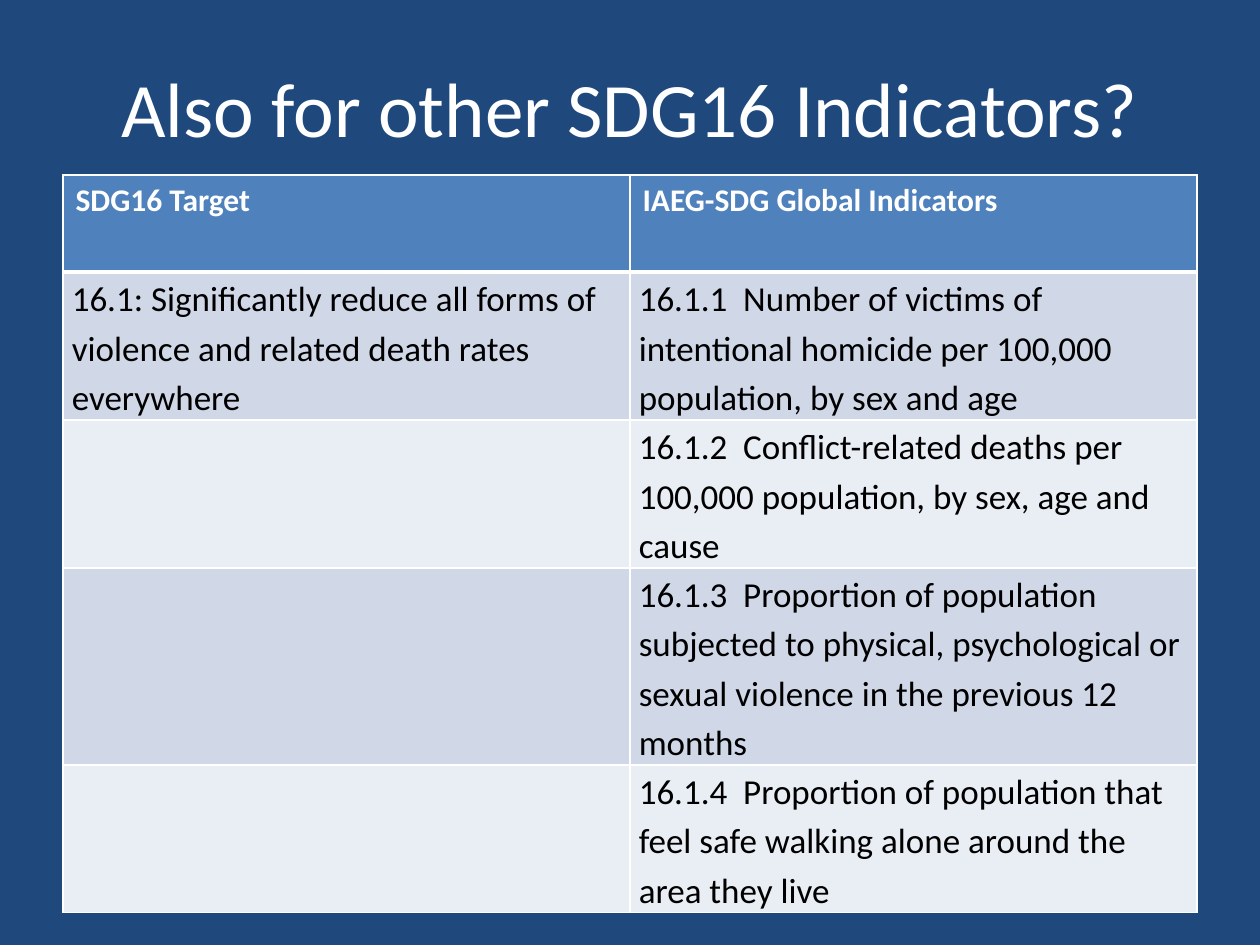
from typing import NamedTuple

from lxml.etree import SubElement
from pptx import Presentation
from pptx.dml.color import RGBColor
from pptx.enum.text import MSO_ANCHOR, PP_ALIGN
from pptx.oxml.ns import qn
from pptx.util import Inches, Pt

FONT = "Calibri"
NAVY, BLUE, WHITE, BLACK = "1F497D", "4F81BD", "FFFFFF", "000000"
BANDS = ("D0D8E8", "E9EDF4")
COLUMN_WIDTH = 4.5


class Row(NamedTuple):
    target: str
    indicator: str
    height: float = 1.17


HEADER = Row("SDG16 Target", "IAEG-SDG Global Indicators", 0.77)
ROWS = [
    Row("16.1: Significantly reduce all forms of violence and related death rates everywhere",
        "16.1.1  Number of victims of intentional homicide per 100,000 population, by sex and age"),
    Row("", "16.1.2  Conflict-related deaths per 100,000 population, by sex, age and cause"),
    Row("", "16.1.3  Proportion of population subjected to physical, psychological or "
            "sexual violence in the previous 12 months", 1.56),
    Row("", "16.1.4  Proportion of population that feel safe walking alone around the area they live"),
]


def set_fill(fill, color: str) -> None:
    fill.solid()
    fill.fore_color.rgb = RGBColor.from_string(color)


def write_text(frame, text: str, *, size: int, color: str, bold: bool = False,
               align=PP_ALIGN.LEFT, line_spacing: float = 1.0) -> None:
    paragraph = frame.paragraphs[0]
    paragraph.alignment = align
    paragraph.line_spacing = line_spacing
    if not text:
        return
    run = paragraph.add_run()
    run.text = text
    run.font.name = FONT
    run.font.size = Pt(size)
    run.font.bold = bold
    set_fill(run.font.fill, color)


def set_borders(cell, top: float = 1, bottom: float = 1) -> None:
    """Draw white cell edges, with widths in points; call before the cell is filled."""
    properties = cell._tc.get_or_add_tcPr()
    for side, width in (("L", 1), ("R", 1), ("T", top), ("B", bottom)):
        line = SubElement(properties, qn(f"a:ln{side}"), w=str(Pt(width)))
        SubElement(SubElement(line, qn("a:solidFill")), qn("a:srgbClr"), val=WHITE)


def add_title(slide, text: str) -> None:
    title = slide.shapes.title
    title.left, title.top = Inches(0.5), Inches(0.3)
    title.width, title.height = Inches(9), Inches(1.09)
    title.text_frame.vertical_anchor = MSO_ANCHOR.MIDDLE
    write_text(title.text_frame, text, size=44, color=WHITE, align=PP_ALIGN.CENTER)


def format_header(cell, text: str) -> None:
    set_borders(cell, bottom=3)
    set_fill(cell.fill, BLUE)
    write_text(cell.text_frame, text, size=18, color=WHITE, bold=True)


def format_body(cell, text: str, row_number: int) -> None:
    cell.margin_left = cell.margin_right = Inches(0.07)
    cell.margin_top = cell.margin_bottom = 0
    set_borders(cell, top=3 if row_number == 1 else 1)
    set_fill(cell.fill, BANDS[(row_number - 1) % 2])
    write_text(cell.text_frame, text, size=20, color=BLACK, line_spacing=1.15)


def add_indicator_table(slide, rows: list[Row]) -> None:
    height = sum(row.height for row in rows)
    table = slide.shapes.add_table(len(rows), 2, Inches(0.5), Inches(1.39),
                                   Inches(2 * COLUMN_WIDTH), Inches(height)).table
    for column in table.columns:
        column.width = Inches(COLUMN_WIDTH)
    for row_number, row in enumerate(rows):
        table.rows[row_number].height = Inches(row.height)
        for column_number, text in enumerate((row.target, row.indicator)):
            cell = table.cell(row_number, column_number)
            if row_number == 0:
                format_header(cell, text)
            else:
                format_body(cell, text, row_number)


def main() -> None:
    presentation = Presentation()
    presentation.slide_width, presentation.slide_height = Inches(10), Inches(7.5)
    slide = presentation.slides.add_slide(presentation.slide_layouts[5])
    set_fill(slide.background.fill, NAVY)
    add_title(slide, "Also for other SDG16 Indicators?")
    add_indicator_table(slide, [HEADER, *ROWS])
    presentation.save("out.pptx")


if __name__ == "__main__":
    main()
